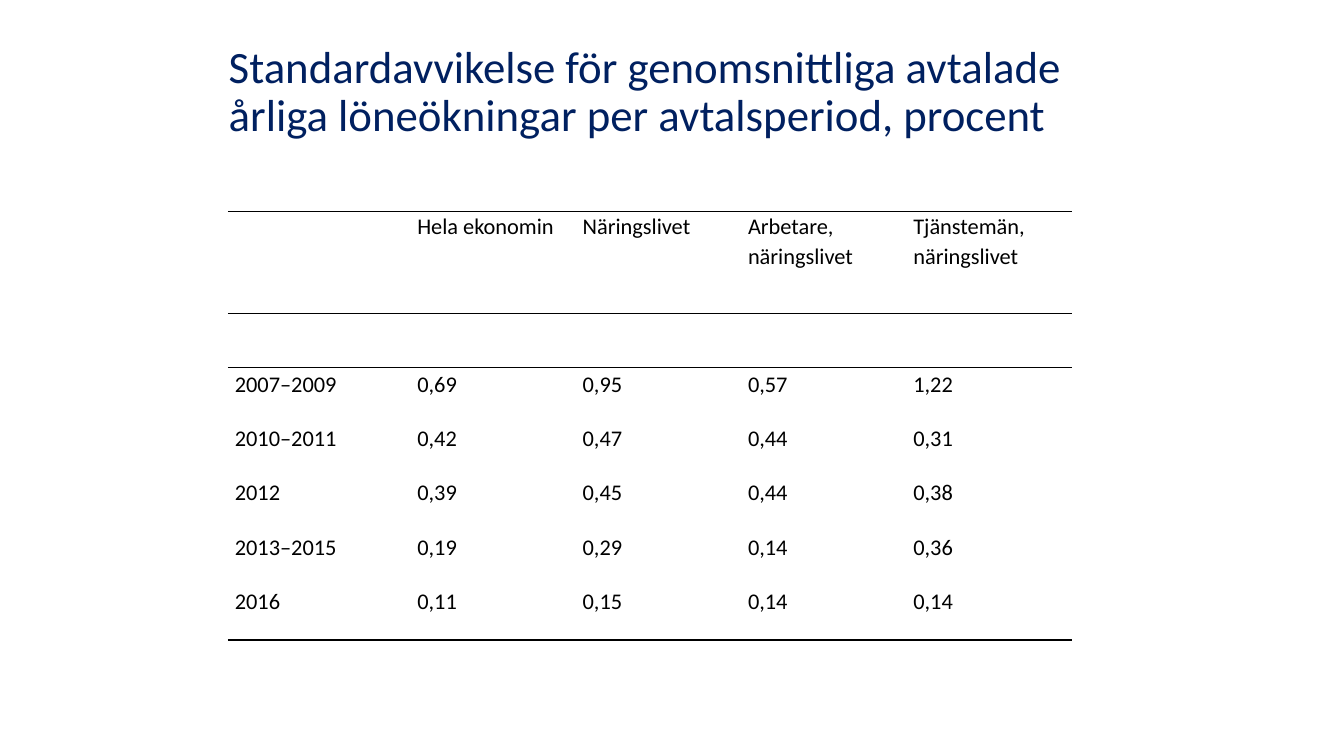
import pptx
import pptx.dml.color
import pptx.enum.text
import pptx.oxml
import pptx.oxml.ns
import pptx.util

Inches = pptx.util.Inches
Pt = pptx.util.Pt
NAVY = pptx.dml.color.RGBColor(0x00, 0x20, 0x60)
BLACK = pptx.dml.color.RGBColor(0x00, 0x00, 0x00)
PLAIN = "{2D5ABB26-0587-4C30-8999-92F81FD0307C}"  # no style, no grid


def write(frame, text, size=16, color=BLACK, space=1.07, after=8):
    para = frame.paragraphs[0]
    para.line_spacing = space
    para.space_after = Pt(after)
    run = para.add_run()
    run.text = text
    run.font.name = "Calibri"
    run.font.size = Pt(size)
    run.font.color.rgb = color


def rule(cell, side):
    line = pptx.oxml.parse_xml(
        f'<a:{side} {pptx.oxml.ns.nsdecls("a")} w="12700"><a:solidFill>'
        f'<a:srgbClr val="{BLACK}"/></a:solidFill></a:{side}>')
    cell._tc.get_or_add_tcPr().append(line)


deck = pptx.Presentation()
deck.slide_width = Inches(13.33)
deck.slide_height = Inches(7.5)
slide = deck.slides.add_slide(deck.slide_layouts[6])

# Title
title = slide.shapes.add_textbox(Inches(2.17), Inches(0.3), Inches(8.99), Inches(1.25))
title.text_frame.word_wrap = True
title.text_frame.vertical_anchor = pptx.enum.text.MSO_ANCHOR.MIDDLE
write(title.text_frame,
      "Standardavvikelse för genomsnittliga avtalade årliga löneökningar per avtalsperiod, procent",
      size=32, color=NAVY, space=0.9, after=0)

# Table contents: heads, a merged gap row, then one row per period
rows = [
    ["", "Hela ekonomin", "Näringslivet", "Arbetare, näringslivet", "Tjänstemän, näringslivet"],
    ["", "", "", "", ""],
    ["2007–2009", "0,69", "0,95", "0,57", "1,22"],
    ["2010–2011", "0,42", "0,47", "0,44", "0,31"],
    ["2012", "0,39", "0,45", "0,44", "0,38"],
    ["2013–2015", "0,19", "0,29", "0,14", "0,36"],
    ["2016", "0,11", "0,15", "0,14", "0,14"],
]
rules = {0: ["lnT", "lnB"], 1: ["lnT"], len(rows) - 1: ["lnB"]}

# Table frame
frame = slide.shapes.add_table(len(rows), len(rows[0]), Inches(2.26), Inches(2.1),
                               Inches(8.36), Inches(4.24))
frame.element.xpath(".//a:tableStyleId")[0].text = PLAIN
table = frame.table
table.first_row = False
table.horz_banding = False
for i, col in enumerate(table.columns):
    col.width = Inches(1.81 if i == 0 else 1.64)
for i, row in enumerate(table.rows):
    row.height = Inches(1.01 if i == 0 else 0.54)
table.cell(1, 0).merge(table.cell(1, 4))

# Cells
for i, row in enumerate(rows):
    for j, text in enumerate(row):
        cell = table.cell(i, j)
        cell.margin_left = cell.margin_right = Inches(0.07)
        cell.margin_top = Inches(0.01 if i else 0)
        cell.margin_bottom = 0
        for side in rules.get(i, []):
            rule(cell, side)
        cell.fill.background()
        if text:
            write(cell.text_frame, text)

deck.save("out.pptx")
